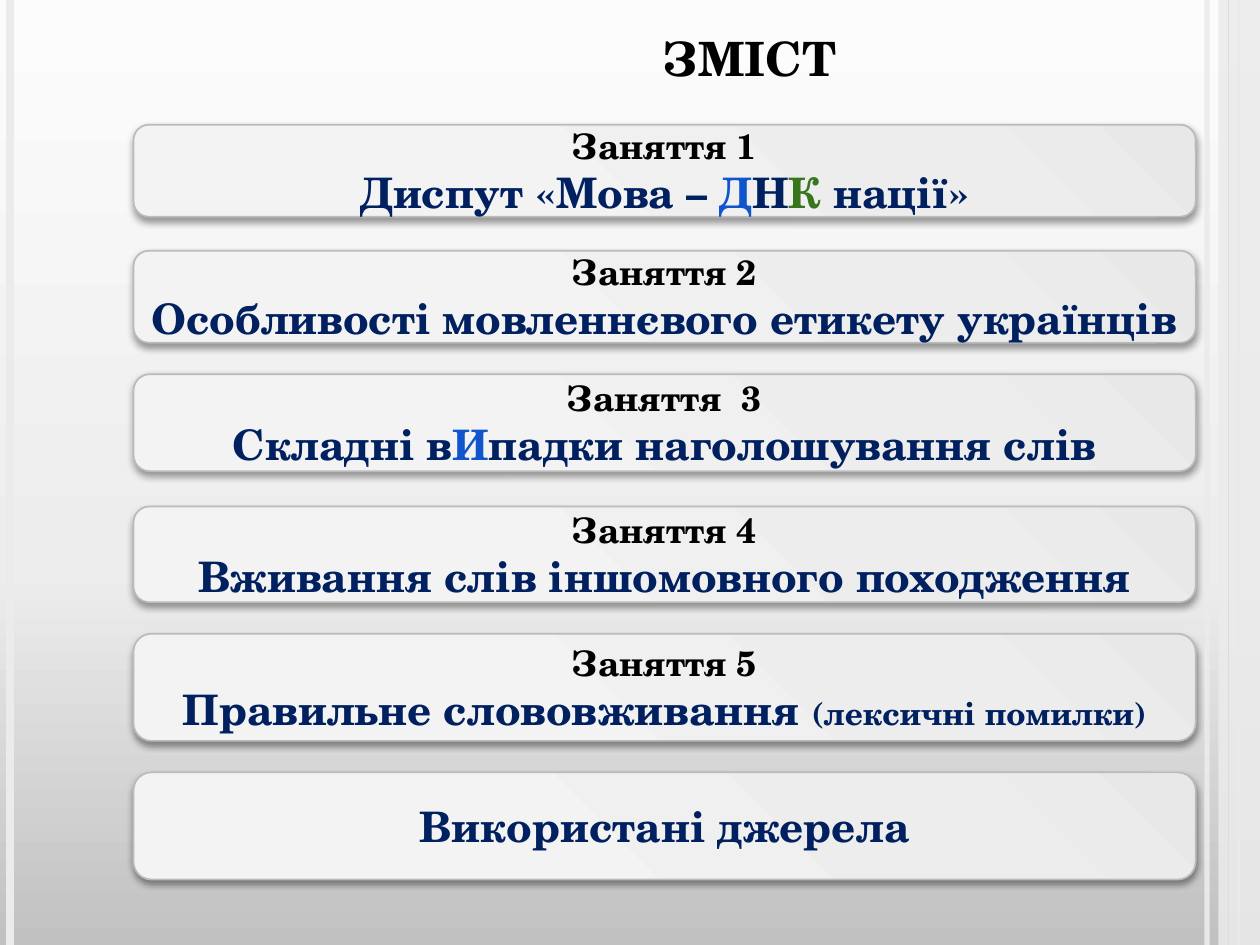
from dataclasses import dataclass

from lxml import etree
from pptx import Presentation
from pptx import util as u
from pptx.dml.color import RGBColor
from pptx.enum import shapes, text
from pptx.oxml import ns, parse_xml


@dataclass(frozen=True)
class Theme:
    font: str = "TeX Gyre Schola"
    black: str = "000000"
    navy: str = "002060"
    blue: str = "1155CC"
    green: str = "38761D"
    rail: str = "EBEBEB"
    thin_rail: str = "DDDDDD"
    border: str = "BBBBBB"
    backdrop: tuple = ((0, "C1C1C1"), (40, "EDEDED"), (100, "FCFCFC"))
    panel: tuple = ((0, "F4F4F4"), (30, "F3F3F3"), (75, "EDEDED"), (100, "E8E8E8"))
    heading: int = 27
    topic: int = 24
    lesson: int = 20
    aside: int = 18


THEME = Theme()
PANEL_LEFT, PANEL_WIDTH = 1.06, 8.43
UPWARD = '<a:lin ang="16200000" scaled="0"/>'
FROM_CORNER = '<a:path path="circle"><a:fillToRect t="100000" r="100000"/></a:path>'

LESSONS = [
    (0.99, 0.73, "Заняття 1", [
        ("Диспут «Мова – ", THEME.navy, THEME.topic),
        ("Д", THEME.blue, THEME.topic),
        ("Н", THEME.navy, THEME.topic),
        ("К", THEME.green, THEME.topic),
        (" нації»", THEME.navy, THEME.topic),
    ]),
    (1.99, 0.73, "Заняття 2", [
        ("Особливості мовленнєвого етикету українців", THEME.navy, THEME.topic),
    ]),
    (2.97, 0.77, "Заняття  3", [
        ("Складні в", THEME.navy, THEME.topic),
        ("И", THEME.blue, THEME.topic),
        ("падки наголошування слів", THEME.navy, THEME.topic),
    ]),
    (4.02, 0.76, "Заняття 4", [
        ("Вживання слів іншомовного походження", THEME.navy, THEME.topic),
    ]),
    (5.03, 0.85, "Заняття 5", [
        ("Правильне слововживання ", THEME.navy, THEME.topic),
        ("(лексичні помилки)", THEME.navy, THEME.aside),
    ]),
    (6.13, 0.85, None, [("Використані джерела", THEME.navy, THEME.topic)]),
]


def rgb(color):
    return RGBColor.from_string(color)


def fill_gradient(owner, stops, direction):
    solid = owner.find(ns.qn("a:solidFill"))
    marks = "".join(
        f'<a:gs pos="{position * 1000}"><a:srgbClr val="{color}"/></a:gs>'
        for position, color in stops
    )
    gradient = parse_xml(
        f'<a:gradFill {ns.nsdecls("a")} rotWithShape="1">'
        f"<a:gsLst>{marks}</a:gsLst>{direction}</a:gradFill>"
    )
    owner.replace(solid, gradient)


def set_opacity(element, percent):
    color = next(element.iter(ns.qn("a:srgbClr")))
    etree.SubElement(color, ns.qn("a:alpha"), val=str(percent * 1000))


def add_shadow(panel):
    panel.shadow.inherit = False
    effects = panel._element.spPr.find(ns.qn("a:effectLst"))
    shadow = etree.SubElement(
        effects, ns.qn("a:outerShdw"), blurRad=str(u.Pt(4)), dist=str(u.Pt(2)),
        dir="5400000", rotWithShape="0",
    )
    etree.SubElement(shadow, ns.qn("a:srgbClr"), val=THEME.black)
    set_opacity(shadow, 40)


def add_backdrop(slide):
    slide.background.fill.solid()
    background = slide._element.xpath(".//p:bgPr")[0]
    fill_gradient(background, THEME.backdrop, UPWARD)


def add_rail(slide, x, color, width, opacity=100):
    rail = slide.shapes.add_connector(
        shapes.MSO_CONNECTOR.STRAIGHT, u.Inches(x), 0, u.Inches(x), u.Inches(7.5)
    )
    rail.line.color.rgb = rgb(color)
    rail.line.width = u.Pt(width)
    properties = rail._element.spPr
    if opacity < 100:
        set_opacity(properties, opacity)
    etree.SubElement(properties, ns.qn("a:effectLst"))


def add_side_band(slide):
    band = slide.shapes.add_shape(
        shapes.MSO_SHAPE.RECTANGLE, u.Inches(9.67), 0, u.Inches(0.33), u.Inches(7.5)
    )
    band.shadow.inherit = False
    band.fill.solid()
    band.fill.fore_color.rgb = rgb(THEME.rail)
    set_opacity(band._element.spPr, 87)
    band.line.fill.background()


def write_lines(frame, lines, anchor):
    frame.word_wrap = True
    frame.vertical_anchor = anchor
    for index, line in enumerate(lines):
        paragraph = frame.add_paragraph() if index else frame.paragraphs[0]
        paragraph.alignment = text.PP_ALIGN.CENTER
        for words, color, size in line:
            run = paragraph.add_run()
            run.text = words
            run.font.name = THEME.font
            run.font.size = u.Pt(size)
            run.font.bold = True
            run.font.color.rgb = rgb(color)


def add_heading(slide):
    heading = slide.shapes.add_textbox(
        u.Inches(PANEL_LEFT), u.Inches(0.19), u.Inches(PANEL_WIDTH), u.Inches(0.54)
    )
    heading.text_frame.margin_left = u.Inches(1.45)
    line = [("ЗМІСТ", THEME.black, THEME.heading)]
    write_lines(heading.text_frame, [line], text.MSO_ANCHOR.BOTTOM)


def add_panel(slide, top, height, lesson, topic):
    panel = slide.shapes.add_shape(
        shapes.MSO_SHAPE.ROUNDED_RECTANGLE, u.Inches(PANEL_LEFT), u.Inches(top),
        u.Inches(PANEL_WIDTH), u.Inches(height),
    )
    panel.fill.solid()
    fill_gradient(panel._element.spPr, THEME.panel, FROM_CORNER)
    panel.line.color.rgb = rgb(THEME.border)
    panel.line.width = u.Pt(1)
    add_shadow(panel)
    lines = [[(lesson, THEME.black, THEME.lesson)]] if lesson else []
    write_lines(panel.text_frame, lines + [topic], text.MSO_ANCHOR.MIDDLE)


def main():
    deck = Presentation()
    deck.slide_width, deck.slide_height = u.Inches(10), u.Inches(7.5)
    slide = deck.slides.add_slide(deck.slide_layouts[6])
    add_backdrop(slide)
    add_rail(slide, 9.58, THEME.rail, 3, 93)
    add_rail(slide, 0.08, THEME.rail, 4.5)
    add_rail(slide, 9.83, THEME.thin_rail, 1.5)
    add_side_band(slide)
    add_rail(slide, 9.75, THEME.thin_rail, 0.75)
    add_heading(slide)
    for top, height, lesson, topic in LESSONS:
        add_panel(slide, top, height, lesson, topic)
    deck.save("out.pptx")


if __name__ == "__main__":
    main()
